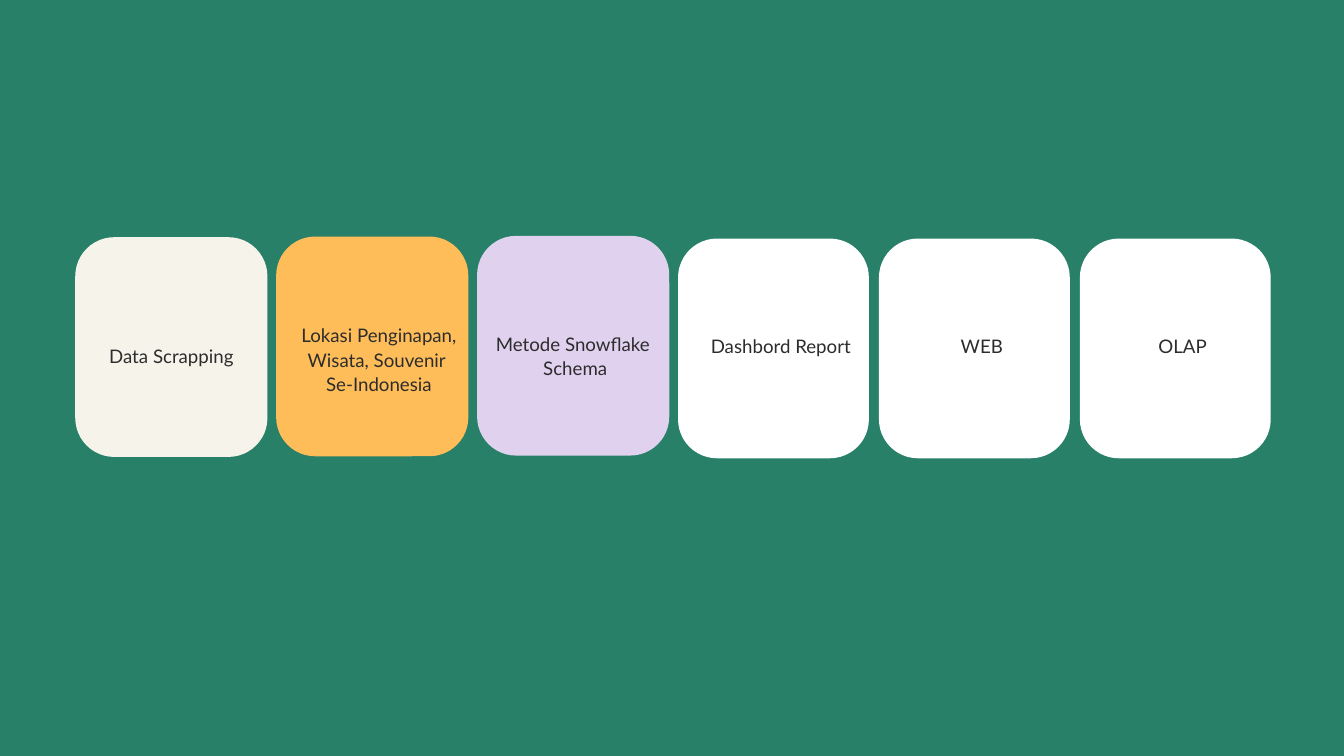
from pptx import Presentation
from pptx.dml.color import RGBColor
from pptx.enum.shapes import MSO_SHAPE
from pptx.enum.text import MSO_ANCHOR, PP_ALIGN
from pptx.util import Inches, Pt


def paint(fill, hex_color):
    fill.solid()
    fill.fore_color.rgb = RGBColor.from_string(hex_color)


deck = Presentation()
deck.slide_width = Inches(20)
deck.slide_height = Inches(11.25)
slide = deck.slides.add_slide(deck.slide_layouts[6])
paint(slide.background.fill, "278067")

LEFT_MARGIN = 1.12
COLUMN = 2.99
CARD_HEIGHT = 3.27
CORNER = 0.58

stages = [
    (["Data Scrapping"], "F6F4EA", 2.86, 3.53, (2.55, 5.28), (5.46, 5.65)),
    (["Lokasi Penginapan,", "Wisata, Souvenir ", "Se-Indonesia"],
     "FFBD59", 2.86, 3.52, (5.64, 5.34), (5.46, 5.65)),
    (["Metode Snowflake ", "Schema"], "E0D2EF", 2.86, 3.51, (8.56, 5.28), (5.02, 5.15)),
    (["Dashbord Report"], "FFFFFF", 2.84, 3.55, (11.62, 5.14), (5.44, 5.63)),
    (["WEB"], "FFFFFF", 2.84, 3.55, (14.61, 5.14), (5.44, 5.63)),
    (["OLAP"], "FFFFFF", 2.84, 3.55, (17.6, 5.13), (5.44, 5.63)),
]

for column, (lines, color, card_width, top, center, label_size) in enumerate(stages):
    stage = slide.shapes.add_group_shape()

    card = stage.shapes.add_shape(
        MSO_SHAPE.ROUNDED_RECTANGLE,
        Inches(LEFT_MARGIN + column * COLUMN), Inches(top),
        Inches(card_width), Inches(CARD_HEIGHT))
    card.adjustments[0] = CORNER / card_width
    card.shadow.inherit = False
    paint(card.fill, color)
    card.line.fill.background()

    label_width, label_height = label_size
    label = stage.shapes.add_textbox(
        Inches(center[0] - label_width / 2), Inches(center[1] - label_height / 2),
        Inches(label_width), Inches(label_height))
    frame = label.text_frame
    frame.word_wrap = True
    frame.vertical_anchor = MSO_ANCHOR.MIDDLE
    frame.margin_left = frame.margin_right = Inches(0.28)
    frame.margin_top = frame.margin_bottom = Inches(0.28)
    frame.text = "\n".join(lines)
    for paragraph in frame.paragraphs:
        paragraph.alignment = PP_ALIGN.CENTER
        paragraph.line_spacing = Pt(26)
        for run in paragraph.runs:
            run.font.name = "Lato"
            run.font.size = Pt(20)
            paint(run.font.fill, "2C2C2C")

deck.save("out.pptx")
